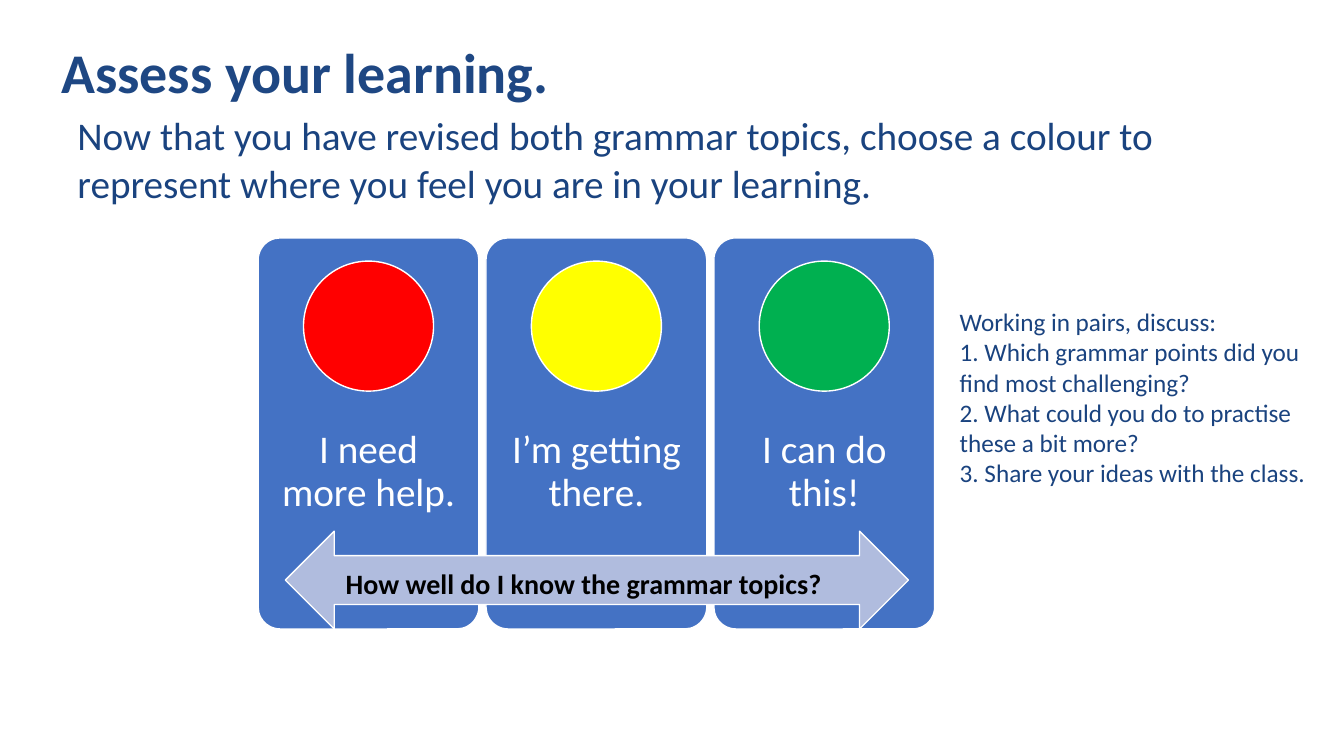
from pptx import Presentation
from pptx.dml.color import RGBColor
from pptx.enum.shapes import MSO_SHAPE
from pptx.enum.text import MSO_ANCHOR, PP_ALIGN
from pptx.util import Inches, Pt

NAVY, TITLE_BLUE, CARD_BLUE = "1A437F", "1E4783", "4472C4"
PALE_BLUE, WHITE, BLACK = "B0BCDE", "FFFFFF", "000000"


def color(value):
    return RGBColor.from_string(value)


def write(tf, text, size=18, fill=NAVY, bold=False, align=PP_ALIGN.LEFT, spacing=None):
    """Put each line of the text in its own paragraph."""
    for i, line in enumerate(text.split("\n")):
        p = tf.add_paragraph() if i else tf.paragraphs[0]
        p.alignment = align
        if spacing:
            p.line_spacing = spacing
        r = p.add_run()
        r.text = line
        r.font.name = "Calibri"
        r.font.size = Pt(size)
        r.font.bold = bold
        r.font.color.rgb = color(fill)


class SlideBuilder:
    def __init__(self, s):
        self.s = s

    def shape(self, kind, x, y, w, h, fill, adjust=None):
        sp = self.s.shapes.add_shape(kind, Inches(x), Inches(y), Inches(w), Inches(h))
        sp.shadow.inherit = False
        sp.fill.solid()
        sp.fill.fore_color.rgb = color(fill)
        sp.line.color.rgb = color(WHITE)
        sp.line.width = Pt(1)
        if adjust is not None:
            sp.adjustments[0] = adjust

    def text(self, x, y, w, h, text, inset=None, anchor=MSO_ANCHOR.TOP, wrap=True, **fmt):
        tf = self.s.shapes.add_textbox(Inches(x), Inches(y), Inches(w), Inches(h)).text_frame
        tf.word_wrap = wrap
        tf.vertical_anchor = anchor
        if inset is not None:
            tf.margin_left = tf.margin_right = Inches(inset)
            tf.margin_top = tf.margin_bottom = Inches(inset)
        write(tf, text, **fmt)

    def card(self, x, label, light):
        width, circle = 2.19, 1.29
        self.shape(MSO_SHAPE.ROUNDED_RECTANGLE, x, 2.36, width, 3.88, CARD_BLUE, adjust=0.1)
        self.text(x, 3.91, width, 1.55, label, inset=0.22, anchor=MSO_ANCHOR.MIDDLE,
                  size=28, fill=WHITE, align=PP_ALIGN.CENTER, spacing=0.9)
        self.shape(MSO_SHAPE.OVAL, x + (width - circle) / 2, 2.59, circle, circle, light)


def main():
    prs = Presentation()
    prs.slide_width, prs.slide_height = Inches(13.33), Inches(7.5)
    slide = SlideBuilder(prs.slides.add_slide(prs.slide_layouts[6]))

    # Heading and instruction
    slide.text(0.51, 0.4, 11.5, 0.68, "Assess your learning.",
               size=40, fill=TITLE_BLUE, bold=True, spacing=0.9)
    slide.text(0.67, 1.06, 11.2, 1.04,
               "Now that you have revised both grammar topics, choose a colour to "
               "represent where you feel you are in your learning.", size=28)

    # Traffic light cards
    cards = [("I need more help.", "FF0000"),
             ("I’m getting there.", "FFFF00"),
             ("I can do this!", "00B050")]
    for i, (label, light) in enumerate(cards):
        slide.card(2.56 + 2.26 * i, label, light)

    # Scale arrow
    slide.shape(MSO_SHAPE.LEFT_RIGHT_ARROW, 2.83, 5.27, 6.18, 0.97, PALE_BLUE)
    slide.text(3.33, 5.57, 4.96, 0.44, "How well do I know the grammar topics?",
               wrap=False, size=20, fill=BLACK, bold=True)

    # Discussion prompts
    slide.text(9.42, 2.99, 3.84, 1.92,
               "Working in pairs, discuss:\n"
               "1. Which grammar points did you find most challenging?\n"
               "2. What could you do to practise these a bit more?\n"
               "3. Share your ideas with the class.")

    prs.save("out.pptx")


if __name__ == "__main__":
    main()
